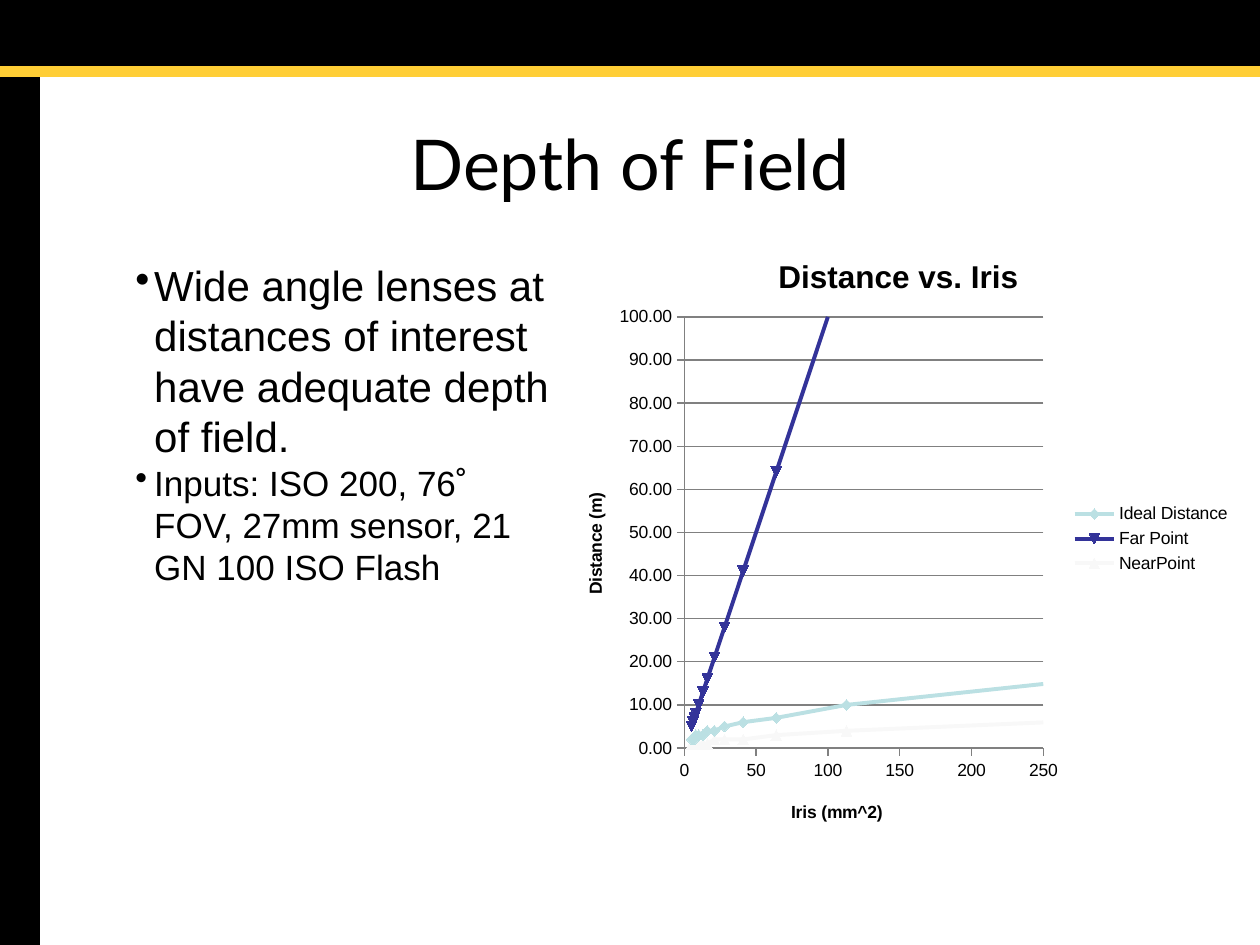
from lxml.etree import SubElement
from pptx import Presentation
from pptx.chart.data import XyChartData
from pptx.dml.color import RGBColor
from pptx.enum.chart import XL_CHART_TYPE as ChartType, XL_LEGEND_POSITION as LegendPosition
from pptx.enum.chart import XL_TICK_MARK as TickMark
from pptx.enum.shapes import MSO_CONNECTOR as Connector, MSO_SHAPE as Shape
from pptx.enum.text import MSO_ANCHOR as Anchor, PP_ALIGN as Align
from pptx.oxml import parse_xml
from pptx.oxml.ns import nsdecls, qn
from pptx.util import Cm, Pt

COLORS = {"black": "000000", "gold": "FFCE36", "gray": "808080",
          "ideal": "BBE0E3", "far": "333399", "near": "F8F8F8"}
STOPS = range(1, 15)
IRIS = [round(1018 / stop ** 2) for stop in STOPS]
SERIES = [
    ("Ideal Distance", "ideal", [round(29.9 / stop) for stop in STOPS]),
    ("Far Point", "far", IRIS),
    ("NearPoint", "near", [round(11.3 / stop) for stop in STOPS]),
]


def color(name):
    """Return the named palette color."""
    return RGBColor.from_string(COLORS[name])


def style_font(font, size, bold=False, name="Arial"):
    """Set size, weight, typeface and black color."""
    font.size, font.bold, font.name = Pt(size), bold, name
    font.color.rgb = color("black")


def write(para, text, align=Align.LEFT, bullet=None, **style):
    """Fill a paragraph with one formatted span."""
    if bullet:
        props = para._p.get_or_add_pPr()
        props.set("marL", str(Cm(0.97)))
        props.set("indent", str(-Cm(0.38)))
        SubElement(props, qn("a:buChar")).set("char", bullet)
    para.alignment = align
    span = para.add_run()
    span.text = text
    style_font(span.font, **style)


def place(element, index, inner=False, **fractions):
    """Give a chart part a manual layout in fractions of the chart."""
    for old in element.findall(qn("c:layout")):
        element.remove(old)
    target = '<c:layoutTarget val="inner"/>' if inner else ""
    modes = '<c:xMode val="edge"/><c:yMode val="edge"/>'
    sizes = "".join(f'<c:{key} val="{value}"/>' for key, value in fractions.items())
    element.insert(index, parse_xml(
        f'<c:layout {nsdecls("c")}><c:manualLayout>{target}{modes}{sizes}'
        '</c:manualLayout></c:layout>'))


class SlideBuilder:
    """Holds the style and the current page."""

    def __init__(self, deck):
        self.page = deck.slides.add_slide(deck.slide_layouts[6])

    def bar(self, left, top, width, height):
        """Draw a black band."""
        bar = self.page.shapes.add_shape(
            Shape.RECTANGLE, Cm(left), Cm(top), Cm(width), Cm(height))
        bar.shadow.inherit = False
        bar.fill.solid()
        bar.fill.fore_color.rgb = color("black")
        bar.line.color.rgb = color("black")
        bar.line.width = Pt(0.75)

    def rule(self, left, right, top):
        """Draw the gold horizontal line."""
        rule = self.page.shapes.add_connector(
            Connector.STRAIGHT, Cm(left), Cm(top), Cm(right), Cm(top))
        rule.line.color.rgb = color("gold")
        rule.line.width = Pt(6)
        SubElement(rule._element.spPr, qn("a:effectLst"))

    def text(self, left, top, width, height, items, anchor=Anchor.TOP, **style):
        """Add a text box with one paragraph per (text, size) item."""
        box = self.page.shapes.add_textbox(Cm(left), Cm(top), Cm(width), Cm(height))
        frame = box.text_frame
        frame.word_wrap = True
        frame.vertical_anchor = anchor
        frame.margin_left = frame.margin_right = Cm(0.25)
        frame.margin_top = frame.margin_bottom = Cm(0.25)
        for index, (text, size) in enumerate(items):
            para = frame.add_paragraph() if index else frame.paragraphs[0]
            write(para, text, size=size, **style)

    def axis(self, axis, title, maximum, step, number_format, spot):
        """Format one axis and its title."""
        axis.minimum_scale, axis.maximum_scale, axis.major_unit = 0, maximum, step
        axis.major_tick_mark, axis.minor_tick_mark = TickMark.OUTSIDE, TickMark.NONE
        axis.tick_labels.number_format = number_format
        axis.tick_labels.number_format_is_linked = False
        style_font(axis.tick_labels.font, 10)
        axis.format.line.color.rgb = color("gray")
        frame = axis.axis_title.text_frame
        write(frame.paragraphs[0], title, align=Align.CENTER, size=10, bold=True)
        place(axis.axis_title._element, 1, **spot)
        return frame

    def chart(self, left, top, width, height):
        """Add the smooth scatter chart of distance against iris."""
        data = XyChartData()
        for name, _, distances in SERIES:
            series = data.add_series(name)
            for iris, distance in zip(IRIS, distances):
                series.add_data_point(iris, distance)
        chart = self.page.shapes.add_chart(
            ChartType.XY_SCATTER_SMOOTH, Cm(left), Cm(top), Cm(width), Cm(height), data).chart
        style_font(chart.font, 10)
        write(chart.chart_title.text_frame.paragraphs[0], "Distance vs. Iris",
              align=Align.CENTER, size=18, bold=True)
        chart.has_legend = True
        chart.legend.position = LegendPosition.RIGHT
        chart.legend.include_in_layout = False
        style_font(chart.legend.font, 10)

        plot = chart.plots[0]
        plot.vary_by_categories = False
        for series, (_, shade, _) in zip(plot.series, SERIES):
            series.smooth = True
            series.format.line.color.rgb = color(shade)
            series.format.line.width = Pt(2.25)
            series.marker.size = 6
            series.marker.format.fill.solid()
            series.marker.format.fill.fore_color.rgb = color(shade)
            series.marker.format.line.color.rgb = color(shade)

        self.axis(chart.category_axis, "Iris (mm^2)", 250, 50, "0", {"x": 0.34, "y": 0.92})
        chart.category_axis.has_major_gridlines = False
        frame = self.axis(chart.value_axis, "Distance (m)", 100, 10, "0.00",
                          {"x": 0.04, "y": 0.42})
        frame._element.find(qn("a:bodyPr")).set("rot", "-5400000")
        chart.value_axis.has_major_gridlines = True
        chart.value_axis.major_gridlines.format.line.color.rgb = color("gray")
        place(chart._chartSpace.find(".//" + qn("c:plotArea")), 0, inner=True,
              x=0.19, y=0.14, w=0.52, h=0.7)


def main():
    """Build and save the depth of field slide."""
    deck = Presentation()
    deck.slide_width, deck.slide_height = Cm(25.4), Cm(19.05)
    builder = SlideBuilder(deck)
    builder.bar(0, 0, 25.4, 1.37)
    builder.bar(0, 0, 0.79, 19.05)
    builder.rule(0, 25.4, 1.44)
    builder.text(1.9, 1.69, 21.6, 3.18, [("Depth of Field", 40)],
                 anchor=Anchor.MIDDLE, align=Align.CENTER, name="Lato")
    builder.text(1.89, 4.98, 9.5, 12.04, [
        ("Wide angle lenses at distances of interest have adequate depth of field.", 24),
        ("Inputs: ISO 200, 76˚ FOV, 27mm sensor, 21 GN 100 ISO Flash", 20),
    ], bullet="•")
    builder.chart(11.15, 4.65, 13.92, 12.42)
    deck.save("out.pptx")


if __name__ == "__main__":
    main()
